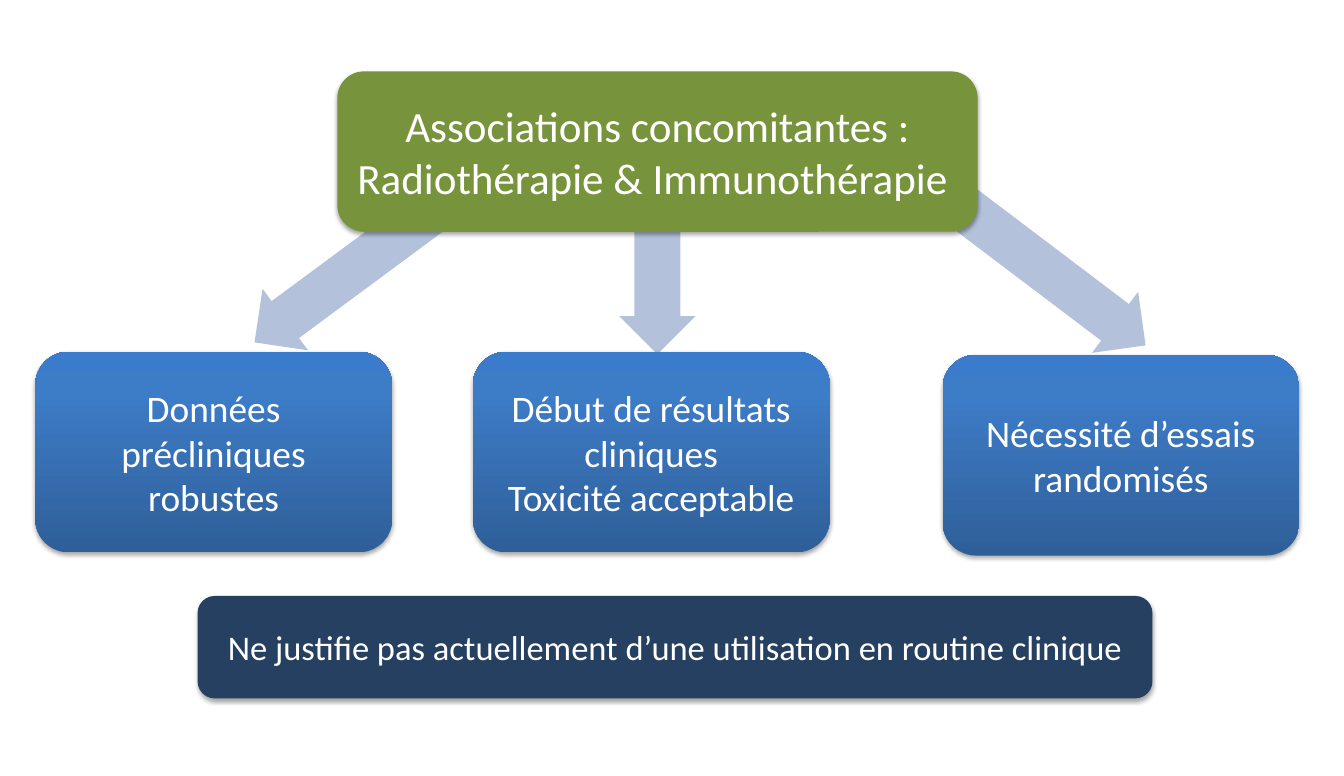
from dataclasses import dataclass

from lxml import etree
from pptx import Presentation
from pptx import util as u
from pptx.dml.color import RGBColor
from pptx.enum import shapes, text
from pptx.oxml import ns

COLORS = {
    "arrow": "B3C1DB",
    "title": "77933C",
    "banner": "254061",
    "text": "FFFFFF",
    "shadow": "000000",
}
CARD_GRADIENT = {0: "2F5F99", 80: "3D7CC7", 100: "3A7CCB"}
FONT = "Calibri"
WIDTH, HEIGHT = u.Inches(12.99), u.Inches(7.5)


@dataclass(frozen=True)
class Area:
    """Position and size in percent of the slide's width and height."""
    left: float
    top: float
    width: float
    height: float


@dataclass(frozen=True)
class Arrow:
    area: Area
    rotation: float


@dataclass(frozen=True)
class Box:
    area: Area
    paragraphs: tuple[str, ...]
    size: int
    fill: str | None = None  # None stands for the card gradient


CARD_WIDTH, CARD_HEIGHT = 26.56, 25.87
ARROW_HEIGHT = 9.87

ARROWS = [
    Arrow(Area(69.67, 30.53, 17.32, ARROW_HEIGHT), 217.1),
    Arrow(Area(43.49, 31.33, 10.85, ARROW_HEIGHT), 270),
    Arrow(Area(17.17, 29.87, 18.09, ARROW_HEIGHT), 323.5),
]

BOXES = [
    Box(Area(25.1, 9.2, 47.65, 20.67),
        ("Associations concomitantes :\nRadiothérapie & Immunothérapie ",), 30, "title"),
    Box(Area(2.62, 45.33, CARD_WIDTH, CARD_HEIGHT),
        ("Données précliniques", "robustes"), 26),
    Box(Area(35.18, 45.33, CARD_WIDTH, CARD_HEIGHT),
        ("Début de résultats cliniques\nToxicité acceptable",), 26),
    Box(Area(70.13, 45.73, CARD_WIDTH, CARD_HEIGHT),
        ("Nécessité d’essais randomisés",), 26),
    Box(Area(14.7, 76.8, 71.05, 13.2),
        ("Ne justifie pas actuellement d’une utilisation en routine clinique",), 24, "banner"),
]


def add_plain_shape(page, kind, area: Area, fill: str | None):
    shape = page.shapes.add_shape(
        kind,
        round(WIDTH * area.left / 100), round(HEIGHT * area.top / 100),
        round(WIDTH * area.width / 100), round(HEIGHT * area.height / 100))
    shape.shadow.inherit = False
    shape.line.fill.background()
    if fill:
        shape.fill.solid()
        shape.fill.fore_color.rgb = RGBColor.from_string(COLORS[fill])
    return shape


def add_color(parent, color: str):
    return etree.SubElement(parent, ns.qn("a:srgbClr"), val=color)


def add_card_gradient(shape) -> None:
    gradient = etree.Element(ns.qn("a:gradFill"), rotWithShape="1")
    stops = etree.SubElement(gradient, ns.qn("a:gsLst"))
    for percent, color in CARD_GRADIENT.items():
        add_color(etree.SubElement(stops, ns.qn("a:gs"), pos=str(percent * 1000)), color)
    etree.SubElement(gradient, ns.qn("a:lin"), ang=str(270 * 60000), scaled="0")
    shape.element.spPr.find(ns.qn("a:prstGeom")).addnext(gradient)


def add_shadow(shape) -> None:
    effects = shape.element.spPr.find(ns.qn("a:effectLst"))
    shadow = etree.SubElement(
        effects, ns.qn("a:outerShdw"), blurRad=str(u.Pt(3.1)), dist=str(u.Pt(1.8)),
        dir=str(90 * 60000), rotWithShape="0")
    etree.SubElement(add_color(shadow, COLORS["shadow"]), ns.qn("a:alpha"), val="35000")


def write_paragraph(para, content: str, *, size: int, color: str) -> None:
    para.alignment = text.PP_ALIGN.CENTER
    for index, line in enumerate(content.split("\n")):
        if index:
            para.add_line_break()
        span = para.add_run()
        span.text = line
        span.font.name = FONT
        span.font.size = u.Pt(size)
        span.font.color.rgb = RGBColor.from_string(COLORS[color])


def draw_arrow(page, arrow: Arrow) -> None:
    shape = add_plain_shape(page, shapes.MSO_SHAPE.LEFT_ARROW, arrow.area, "arrow")
    shape.adjustments[0] = 0.6
    shape.adjustments[1] = 0.5
    shape.rotation = arrow.rotation


def draw_box(page, box: Box) -> None:
    shape = add_plain_shape(page, shapes.MSO_SHAPE.ROUNDED_RECTANGLE, box.area, box.fill)
    if box.fill is None:
        add_card_gradient(shape)
    add_shadow(shape)
    frame = shape.text_frame
    frame.word_wrap = True
    frame.vertical_anchor = text.MSO_ANCHOR.MIDDLE
    for index, content in enumerate(box.paragraphs):
        para = frame.add_paragraph() if index else frame.paragraphs[0]
        write_paragraph(para, content, size=box.size, color="text")


def main() -> None:
    deck = Presentation()
    deck.slide_width, deck.slide_height = WIDTH, HEIGHT
    page = deck.slides.add_slide(deck.slide_layouts[6])
    for arrow in ARROWS:
        draw_arrow(page, arrow)
    for box in BOXES:
        draw_box(page, box)
    deck.save("out.pptx")


if __name__ == "__main__":
    main()
